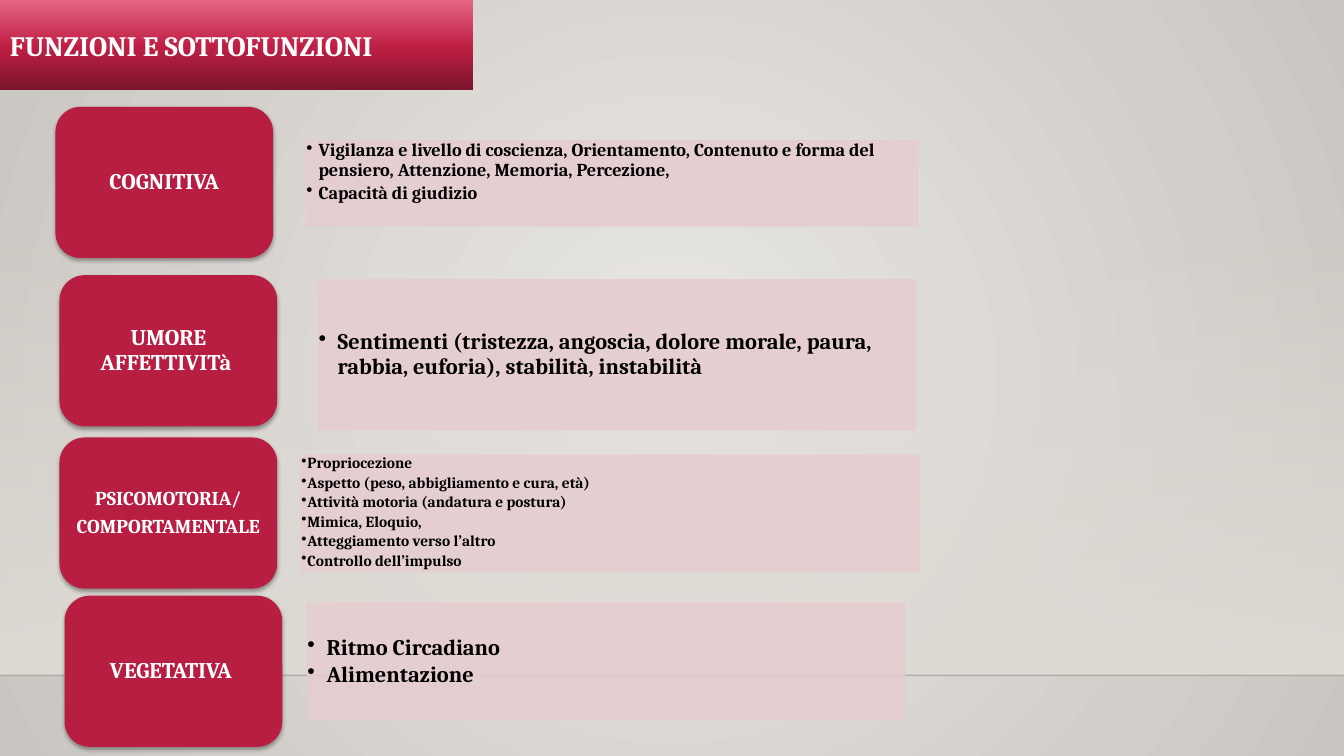
from dataclasses import dataclass
from typing import Any

from lxml.etree import SubElement as Sub
from pptx import Presentation
from pptx.dml.color import RGBColor as Rgb
from pptx.enum.shapes import MSO_CONNECTOR as Conn, MSO_SHAPE as Kind
from pptx.enum.text import MSO_ANCHOR as Anchor, PP_ALIGN as Align
from pptx.oxml.ns import qn
from pptx.util import Inches, Pt

RED, PINK, WHITE, BLACK = "B71E42", "E6CDCF", "FFFFFF", "000000"
WIDE, TALL, FLOOR = 13.33, 7.5, 6.7
Box = tuple[float, float, float, float]


@dataclass
class Style:
    size: float
    color: str
    align: Any = Align.LEFT
    anchor: Any = Anchor.MIDDLE
    inset: tuple[float, float] = (0.01, 0.01)
    line: float = 0.9
    after: float = 2
    hang: float = 0


@dataclass
class Row:
    left: float
    top: float
    size: float
    label: list[str]
    panel: Box
    style: Style
    items: list[str]


def hue(code: str) -> Rgb:
    return Rgb.from_string(code)


def node(up: Any, tag: str, **vals: Any) -> Any:
    return Sub(up, qn(f"a:{tag}"), {k: str(v) for k, v in vals.items()})


def fade(fill: Any, root: Any, stops: list[tuple], angle: int | None = None) -> None:
    fill.gradient()
    grad = root.find(f".//{qn('a:gradFill')}")
    for kid in list(grad):
        grad.remove(kid)
    group = node(grad, "gsLst")
    for pos, code, alpha in stops:
        tint = node(node(group, "gs", pos=pos * 1000), "srgbClr", val=code)
        node(tint, "alpha", val=alpha * 1000)
    if angle is None:
        ring = node(grad, "path", path="circle")
        node(ring, "fillToRect", l=50000, t=50000, r=50000, b=50000)
    else:
        node(grad, "lin", ang=angle * 60000, scaled=0)


def block(slide: Any, box: Box, kind: Any = Kind.RECTANGLE, fill: str = "") -> Any:
    shape = slide.shapes.add_shape(kind, *map(Inches, box))
    shape.shadow.inherit = False
    shape.line.fill.background()
    if fill:
        shape.fill.solid()
        shape.fill.fore_color.rgb = hue(fill)
    return shape


def write(shape: Any, lines: list[str], style: Style) -> None:
    frame = shape.text_frame
    side, edge = map(Inches, style.inset)
    form = {"word_wrap": True, "vertical_anchor": style.anchor,
            "margin_left": side, "margin_right": side,
            "margin_top": edge, "margin_bottom": edge}
    for key, val in form.items():
        setattr(frame, key, val)
    for i, line in enumerate(lines):
        para = frame.add_paragraph() if i else frame.paragraphs[0]
        if style.hang:
            props = para._p.get_or_add_pPr()
            props.set("marL", str(Inches(style.hang)))
            props.set("indent", str(-Inches(style.hang)))
            node(node(props, "buClr"), "srgbClr", val=BLACK)
            node(props, "buChar", char="•")
        look = {"alignment": style.align, "line_spacing": style.line,
                "space_after": Pt(style.after)}
        for key, val in look.items():
            setattr(para, key, val)
        run = para.add_run()
        run.text = line
        face = {"name": "Cambria", "size": Pt(style.size), "bold": True}
        for key, val in face.items():
            setattr(run.font, key, val)
        run.font.color.rgb = hue(style.color)


def shade(shape: Any) -> None:
    group = shape.element.spPr.find(qn("a:effectLst"))
    cast = node(group, "outerShdw", blurRad=Pt(3.1), dist=Pt(1.8),
                dir=5400000, rotWithShape=0)
    node(node(cast, "srgbClr", val=BLACK), "alpha", val=35000)


def scene(slide: Any) -> None:
    fade(slide.background.fill, slide.element,
         [(0, "EBE9E6", 100), (100, "C9C5C0", 100)])
    wall = block(slide, (0, 2.21, WIDE, FLOOR - 2.21))
    fade(wall.fill, wall.element, [(0, "DFDBD5", 0), (100, "DFDBD5", 100)], 90)
    line = slide.shapes.add_connector(
        Conn.STRAIGHT, 0, Inches(FLOOR), Inches(WIDE), Inches(FLOOR))
    line.line.width = Pt(1)
    line.line.color.rgb = hue("000001")
    node(line.element.find(f".//{qn('a:srgbClr')}"), "alpha", val=20000)
    node(line.element.spPr, "effectLst")


def draw(slide: Any, row: Row) -> None:
    panel = block(slide, row.panel, fill=PINK)
    node(panel.element.find(f".//{qn('a:srgbClr')}"), "alpha", val=90000)
    write(panel, row.items, row.style)
    card = block(slide, (row.left, row.top, 2.16, 1.5), Kind.ROUNDED_RECTANGLE, RED)
    shade(card)
    write(card, row.label, Style(row.size, WHITE, Align.CENTER,
                                 inset=(0.06, 0.03), after=5))


ROWS = [
    Row(0.55, 1.06, 16, ["COGNITIVA"], (3.03, 1.39, 6.08, 0.86),
        Style(13, BLACK, anchor=Anchor.TOP, hang=0.12),
        ["Vigilanza e livello di coscienza, Orientamento, Contenuto e forma del "
         "pensiero, Attenzione, Memoria, Percezione,",
         "Capacità di giudizio"]),
    Row(0.59, 2.73, 16, ["UMORE AFFETTIVITà "], (3.15, 2.77, 5.94, 1.5),
        Style(16, BLACK, hang=0.19),
        ["Sentimenti (tristezza, angoscia, dolore morale, paura, rabbia, "
         "euforia), stabilità, instabilità"]),
    Row(0.59, 4.34, 14, ["PSICOMOTORIA/", "COMPORTAMENTALE"],
        (2.98, 4.51, 6.14, 1.17),
        Style(11, BLACK, anchor=Anchor.TOP, hang=0.06),
        ["Propriocezione", "Aspetto (peso, abbigliamento e cura, età)",
         "Attività motoria (andatura e postura)", "Mimica, Eloquio,",
         "Atteggiamento verso l’altro", "Controllo dell’impulso"]),
    Row(0.64, 5.91, 16, ["VEGETATIVA "], (3.04, 5.98, 5.94, 1.17),
        Style(16, BLACK, hang=0.19),
        ["Ritmo Circadiano", "Alimentazione"]),
]


def main() -> None:
    deck = Presentation()
    deck.slide_width, deck.slide_height = Inches(WIDE), Inches(TALL)
    slide = deck.slides.add_slide(deck.slide_layouts[6])
    scene(slide)
    for row in ROWS:
        draw(slide, row)
    title = block(slide, (0, 0, 4.69, 0.89))
    fade(title.fill, title.element,
         [(0, "7B142C", 100), (48, "BF1F45", 100), (100, "E66684", 100)], 270)
    write(title, ["FUNZIONI E SOTTOFUNZIONI"],
          Style(20, WHITE, inset=(0.1, 0.05), line=1.0, after=0))
    deck.save("out.pptx")


if __name__ == "__main__":
    main()
